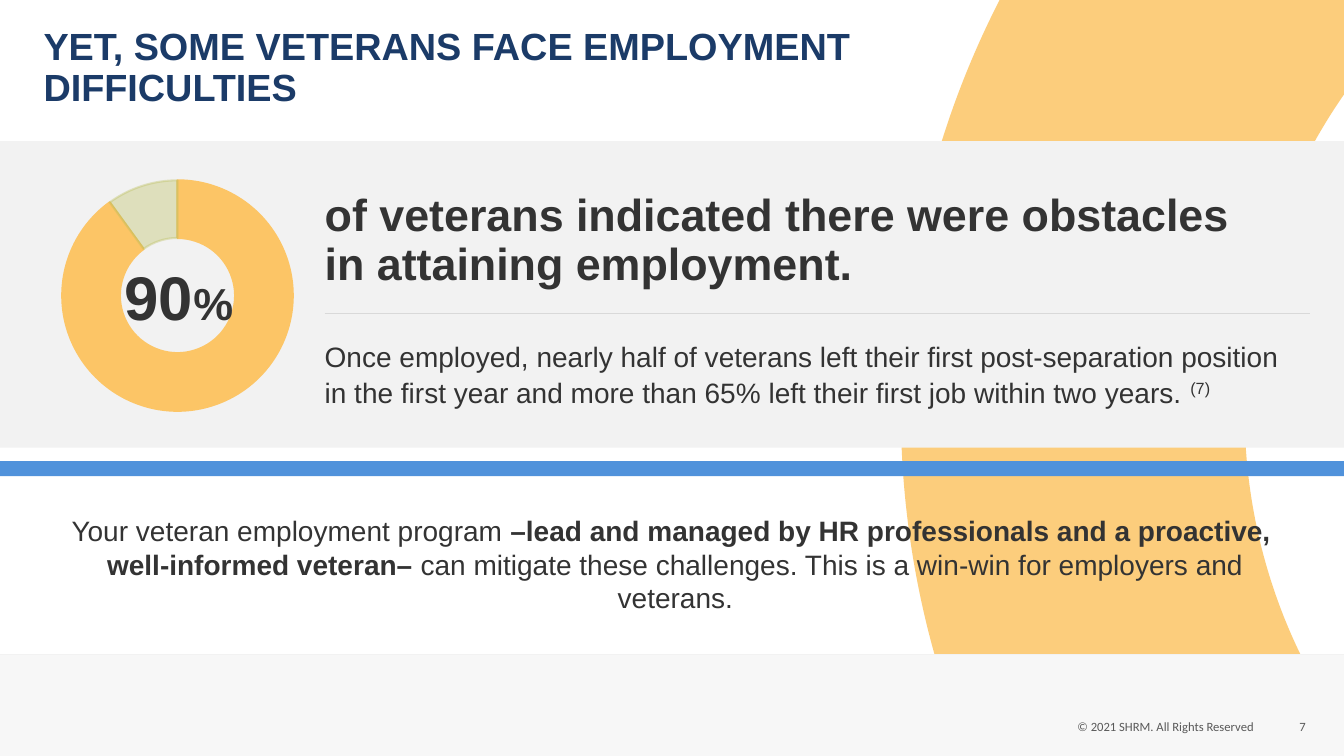
from lxml import etree
from pptx import Presentation
from pptx.chart.data import CategoryChartData
from pptx.dml.color import RGBColor
from pptx.enum.chart import XL_CHART_TYPE
from pptx.enum.shapes import MSO_CONNECTOR, MSO_SHAPE
from pptx.enum.text import MSO_ANCHOR, PP_ALIGN
from pptx.oxml.ns import qn
from pptx.util import Inches, Pt

DOUGHNUT = XL_CHART_TYPE.DOUGHNUT
STRAIGHT = MSO_CONNECTOR.STRAIGHT
RECTANGLE, OVAL = MSO_SHAPE.RECTANGLE, MSO_SHAPE.OVAL
TOP, MIDDLE, BOTTOM = MSO_ANCHOR.TOP, MSO_ANCHOR.MIDDLE, MSO_ANCHOR.BOTTOM
LEFT, CENTER, RIGHT = PP_ALIGN.LEFT, PP_ALIGN.CENTER, PP_ALIGN.RIGHT

WHITE = RGBColor(0xFF, 0xFF, 0xFF)
BLACK = RGBColor(0x00, 0x00, 0x00)
PALE_GRAY = RGBColor(0xF2, 0xF2, 0xF2)
RULE_GRAY = RGBColor(0xD9, 0xD9, 0xD9)
FOOTER_GRAY = RGBColor(0x59, 0x59, 0x59)
TEXT_GRAY = RGBColor(0x33, 0x33, 0x33)
NAVY = RGBColor(0x1B, 0x3B, 0x68)
BLUE = RGBColor(0x50, 0x92, 0xDB)
AMBER = RGBColor(0xFC, 0xC5, 0x66)
OLIVE = RGBColor(0xBA, 0xBD, 0x59)

# Grid: 160 columns by 90 rows of square cells
COLUMNS, ROWS = 160, 90
CELL = Inches(13.33) / COLUMNS
TEXT_LEFT, TEXT_WIDTH = 38.65, 117.35
FOOTER_TOP = 77.9


def cells(*counts):
    return [round(count * CELL) for count in counts]


def set_fill(fill, color, opacity=100):
    fill.solid()
    fill.fore_color.rgb = color
    if opacity < 100:
        color_element = fill._xPr.find(qn("a:solidFill"))[0]
        etree.SubElement(color_element, qn("a:alpha"), val=str(opacity * 1000))


def finish_shape(shape, color, opacity=100):
    shape.shadow.inherit = False
    set_fill(shape.fill, color, opacity)
    shape.line.fill.background()


def add_block(slide, box, color, opacity=100, kind=RECTANGLE):
    finish_shape(slide.shapes.add_shape(kind, *cells(*box)), color, opacity)


def add_rule(slide, left, right, row, color):
    rule = slide.shapes.add_connector(STRAIGHT, *cells(left, row, right, row))
    rule.line.color.rgb = color
    rule.line.width = Pt(0.5)
    etree.SubElement(rule._element.spPr, qn("a:effectLst"))


def add_text(slide, box, runs, size, color, font="Arial", bold=None, align=LEFT,
             anchor=TOP, insets=(0, 0), spacing=None):
    """Each run is a text and a dict of its own bold, size or baseline."""
    frame = slide.shapes.add_textbox(*cells(*box)).text_frame
    frame.word_wrap = True
    frame.vertical_anchor = anchor
    frame.margin_left = frame.margin_right = Inches(insets[0])
    frame.margin_top = frame.margin_bottom = Inches(insets[1])
    paragraph = frame.paragraphs[0]
    paragraph.alignment = align
    if spacing:
        paragraph.line_spacing = spacing
    paragraph.font.name = font
    paragraph.font.size = Pt(size)
    paragraph.font.color.rgb = color
    paragraph.font.bold = bold
    for text, own in runs:
        for index, line in enumerate(text.split("\n")):
            if index:
                paragraph.add_line_break()
            run = paragraph.add_run()
            run.text = line
            if "bold" in own:
                run.font.bold = own["bold"]
            if "size" in own:
                run.font.size = Pt(own["size"])
            if "baseline" in own:
                run.font._element.set("baseline", str(own["baseline"] * 1000))


def add_arc(slide):
    # A step of one point is a line, a step of three points is a curve
    start = (172.56, -2.16)
    steps = [
        [(131.88, -19.32)], [(128.88, -15.72)],
        [(97.8, 25.44), (100.92, 81.96), (133.68, 119.4)],
        [(139.8, 125.76)], [(157.8, 83.16)], [(156.96, 81.96)],
        [(144.12, 59.64), (145.08, 30.84), (161.64, 9)],
        [(164.16, 5.76), (166.92, 2.76), (169.92, 0)],
    ]
    builder = slide.shapes.build_freeform(*cells(*start))
    builder.add_line_segments([cells(*point) for step in steps for point in step])
    shape = builder.convert_to_shape()
    segments = iter(shape._element.findall(".//" + qn("a:lnTo")))
    for step in steps:
        first, *others = [next(segments) for _ in step]
        if others:
            first.tag = qn("a:cubicBezTo")
            for other in others:
                first.append(other[0])
                other.getparent().remove(other)
    finish_shape(shape, AMBER, 85)


def add_doughnut(slide, box, values):
    data = CategoryChartData()
    data.categories = ["1", "2"]
    data.add_series("Series 1", values)
    chart = slide.shapes.add_chart(DOUGHNUT, *cells(*box), data).chart
    chart.has_legend = False
    chart.has_title = False
    chart.font.name = "Calibri"
    chart.font.size = Pt(10)
    chart.font.color.rgb = BLACK
    plot = chart.plots[0]
    plot.vary_by_categories = True
    for index, (color, opacity) in enumerate([(AMBER, 100), (OLIVE, 35)]):
        point_format = plot.series[0].points[index].format
        set_fill(point_format.fill, color, opacity)
        point_format.line.width = Pt(1.5)
        set_fill(point_format.line.fill, color, opacity)

    # Hole size and place of the ring
    plot._element.find(qn("c:holeSize")).set("val", "75")
    plot_area = chart._chartSpace.chart.plotArea
    layout = plot_area.find(qn("c:layout"))
    if layout is None:
        layout = etree.Element(qn("c:layout"))
        plot_area.insert(0, layout)
    manual = etree.SubElement(layout, qn("c:manualLayout"))
    settings = [("layoutTarget", "inner"), ("xMode", "edge"), ("yMode", "edge"),
                ("x", "0.17"), ("y", "0.01"), ("w", "0.65"), ("h", "0.97")]
    for name, value in settings:
        etree.SubElement(manual, qn("c:" + name), val=value)


def main():
    presentation = Presentation()
    presentation.slide_width = Inches(13.33)
    presentation.slide_height = Inches(7.5)
    slide = presentation.slides.add_slide(presentation.slide_layouts[6])

    # Background arc and footer
    add_arc(slide)
    for color, opacity in [(WHITE, 100), (PALE_GRAY, 60)]:
        add_block(slide, (0, FOOTER_TOP, COLUMNS, ROWS - FOOTER_TOP), color, opacity)
    add_text(slide, (150.25, 82.75, 5.2, 7.45), [("7", {})], 9, FOOTER_GRAY,
             "Calibri", align=RIGHT, anchor=MIDDLE)
    add_text(slide, (127.25, 83.7, 23, 5.6), [("© 2021 SHRM. All Rights Reserved", {})],
             9, FOOTER_GRAY, "Calibri", align=CENTER, anchor=MIDDLE)
    add_rule(slide, 0, COLUMNS, FOOTER_TOP, PALE_GRAY)

    # Title
    add_text(slide, (4, 3, 108.2, 10.4),
             [("YET, SOME VETERANS FACE EMPLOYMENT DIFFICULTIES", {})], 27, NAVY,
             bold=True, anchor=MIDDLE, insets=(0.1, 0.05), spacing=0.9)

    # Statistic band
    add_block(slide, (0, 16.8, COLUMNS, 36.5), PALE_GRAY)
    add_block(slide, (0, 54.9, COLUMNS, 1.8), BLUE)
    add_text(slide, (TEXT_LEFT, 22.25, TEXT_WIDTH, 12.85),
             [("of veterans indicated there were obstacles \nin attaining employment.", {})],
             32, TEXT_GRAY, bold=True, anchor=BOTTOM, insets=(0, 0.05), spacing=0.9)
    add_rule(slide, TEXT_LEFT, TEXT_LEFT + TEXT_WIDTH, 37.3, RULE_GRAY)
    add_text(slide, (TEXT_LEFT, 40.1, TEXT_WIDTH, 8.4),
             [("Once employed, nearly half of veterans left their first post-separation "
               "position \nin the first year and more than 65% left their first job "
               "within two years. ", {}), ("(7)", {"baseline": 30})],
             20, TEXT_GRAY, spacing=1.07)

    # Doughnut with its center disc and value
    add_block(slide, (10.7, 30.4, 21.1, 21.1), PALE_GRAY, kind=OVAL)
    add_doughnut(slide, (0.1, 21.2, 42.5, 28.3), (90, 10))
    add_text(slide, (9, 30.8, 24.6, 8.9), [("90", {"size": 44}), ("%", {"size": 32})],
             44, TEXT_GRAY, bold=True, align=CENTER)

    # Closing message
    add_text(slide, (5.8, 61.15, 149.2, 12.1),
             [("Your veteran employment program ", {}),
              ("–lead and managed by HR professionals and a proactive, \n"
               "well-informed veteran– ", {"bold": True}),
              ("can mitigate these challenges. This is a win-win for employers and "
               "veterans.", {})],
             20, TEXT_GRAY, align=CENTER)

    presentation.save("out.pptx")


if __name__ == "__main__":
    main()
